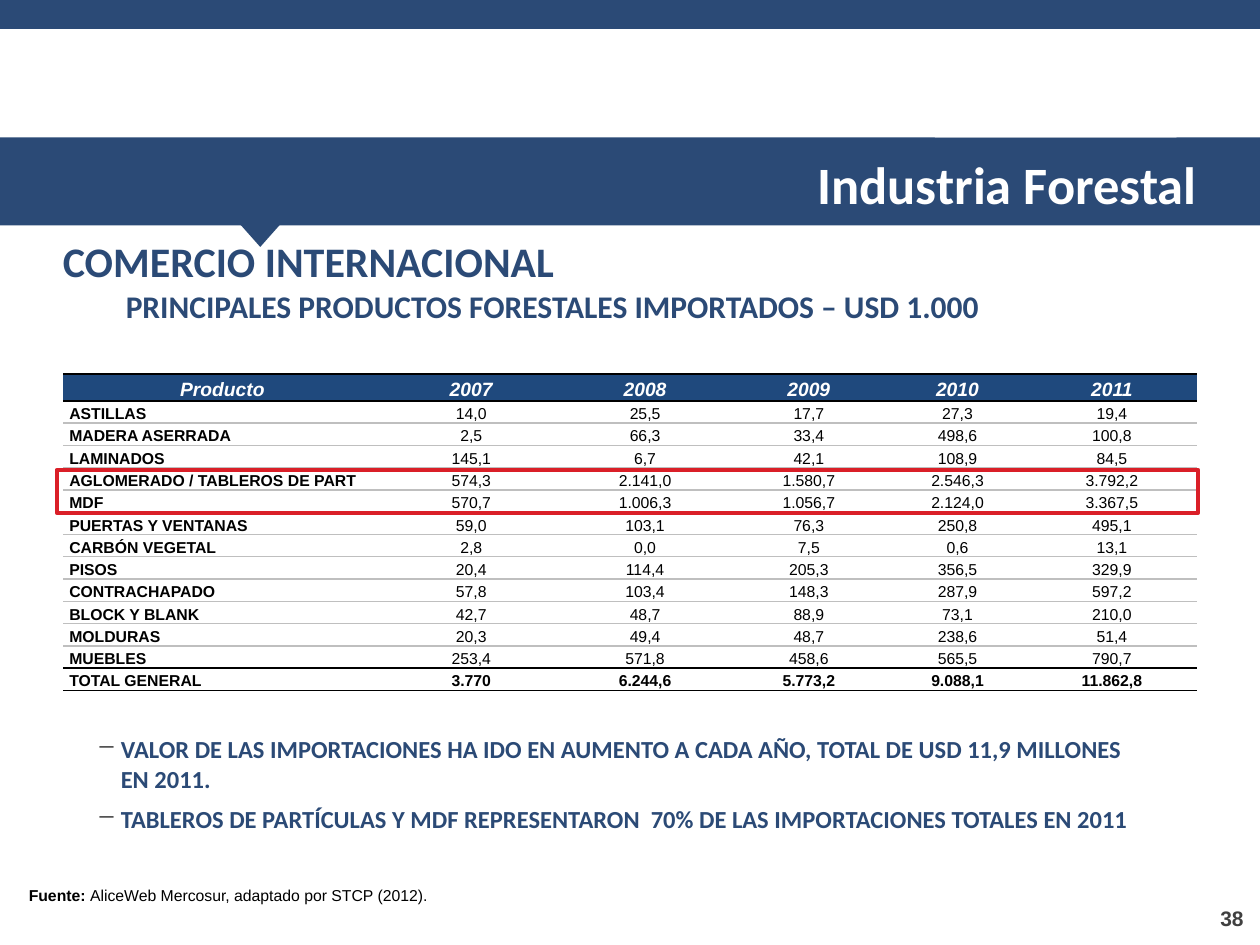
import pptx
import pptx.util
import pptx.dml.color
import pptx.enum.shapes
import pptx.enum.text
import pptx.oxml.ns
import lxml.etree

Inches = pptx.util.Inches
Pt = pptx.util.Pt
SHAPE = pptx.enum.shapes.MSO_SHAPE
ALIGN = pptx.enum.text.PP_ALIGN
COLOURS = {"navy": "2B4A76", "header": "1F497D", "red": "DA1F28", "white": "FFFFFF",
           "black": "000000", "rule": "BFBFBF", "grey": "404040"}


def colour(name):
    return pptx.dml.color.RGBColor.from_string(COLOURS[name])


def write(frame, text, first=True, font="Calibri", size=14, ink="navy", bold=True,
          italic=False, align=ALIGN.LEFT, margin=0, indent=0, after=0, spacing=None,
          bullet=None, plain=""):
    """Add one paragraph; plain is a closing span without bold."""
    para = frame.paragraphs[0] if first else frame.add_paragraph()
    props = para._p.get_or_add_pPr()
    props.set("marL", str(Inches(margin)))
    props.set("indent", str(Inches(indent)))
    para.alignment = align
    para.space_after = Pt(after)
    if spacing:
        para.line_spacing = spacing
    if bullet:
        holder = lxml.etree.SubElement(props, pptx.oxml.ns.qn("a:buClr"))
        lxml.etree.SubElement(holder, pptx.oxml.ns.qn("a:srgbClr"), val=COLOURS["black"])
        lxml.etree.SubElement(props, pptx.oxml.ns.qn("a:buChar"), char=bullet)
    for words, weight in ((text, bold), (plain, False)):
        if words:
            span = para.add_run()
            span.text = words
            span.font.name = font
            span.font.size = Pt(size)
            span.font.bold = weight
            span.font.italic = italic
            span.font.color.rgb = colour(ink)


deck = pptx.Presentation()
deck.slide_width, deck.slide_height = Inches(10), Inches(7.5)
page = deck.slides.add_slide(deck.slide_layouts[6])

# Bands, tab and pointer
for kind, fill, place, turn in (
    (SHAPE.RECTANGLE, "navy", (0, 0, 10, 0.23), 0),
    (SHAPE.RECTANGLE, "navy", (0, 1.09, 10, 0.7), 0),
    (SHAPE.PENTAGON, "white", (7.42, 0.7, 2.11, 0.39), 0),
    (SHAPE.ISOSCELES_TRIANGLE, "navy", (1.79, 1.65, 0.55, 0.31), 180),
):
    shape = page.shapes.add_shape(kind, *map(Inches, place))
    shape.shadow.inherit = False
    shape.fill.solid()
    shape.fill.fore_color.rgb = colour(fill)
    shape.line.fill.background()
    shape.rotation = turn

# Headings, source, page number and findings
finding = dict(margin=0.39, indent=-0.19, after=6, bullet="−")
for place, right_inset, paragraphs in (
    ((2.64, 1.16, 7.06, 0.7), 0.2, [("Industria Forestal",
     dict(size=30, ink="white", align=ALIGN.RIGHT))]),
    ((0.21, 1.82, 9.49, 0.5), 0.1, [("COMERCIO INTERNACIONAL",
     dict(size=24, margin=0.57, indent=-0.38))]),
    ((0.5, 2.23, 8.36, 0.4), 0.1, [("PRINCIPALES PRODUCTOS FORESTALES IMPORTADOS – USD 1.000",
     dict(size=18, margin=0.4))]),
    ((0.13, 6.98, 3.91, 0.25), 0.1, [("Fuente: ",
     dict(font="Arial", size=9, ink="black",
          plain="AliceWeb Mercosur, adaptado por STCP (2012)."))]),
    ((8.31, 7.14, 1.71, 0.3), 0.15, [("38",
     dict(font="Arial", size=12, ink="grey", align=ALIGN.RIGHT))]),
    ((0.47, 5.78, 8.62, 0.89), 0.1, [
        ("VALOR DE LAS IMPORTACIONES HA IDO EN AUMENTO A CADA AÑO, "
         "TOTAL DE USD 11,9 MILLONES EN 2011.", finding),
        ("TABLEROS DE PARTÍCULAS Y MDF REPRESENTARON  70% DE LAS "
         "IMPORTACIONES TOTALES EN 2011", finding)]),
):
    box = page.shapes.add_textbox(*map(Inches, place))
    box.text_frame.word_wrap = True
    box.text_frame.margin_right = Inches(right_inset)
    for number, (text, style) in enumerate(paragraphs):
        write(box.text_frame, text, first=number == 0, **style)

# Import values by product and year
rows = [
    ("Producto", "2007", "2008", "2009", "2010", "2011"),
    ("ASTILLAS", "14,0", "25,5", "17,7", "27,3", "19,4"),
    ("MADERA ASERRADA", "2,5", "66,3", "33,4", "498,6", "100,8"),
    ("LAMINADOS", "145,1", "6,7", "42,1", "108,9", "84,5"),
    ("AGLOMERADO / TABLEROS DE PART", "574,3", "2.141,0", "1.580,7", "2.546,3", "3.792,2"),
    ("MDF", "570,7", "1.006,3", "1.056,7", "2.124,0", "3.367,5"),
    ("PUERTAS Y VENTANAS", "59,0", "103,1", "76,3", "250,8", "495,1"),
    ("CARBÓN VEGETAL", "2,8", "0,0", "7,5", "0,6", "13,1"),
    ("PISOS", "20,4", "114,4", "205,3", "356,5", "329,9"),
    ("CONTRACHAPADO", "57,8", "103,4", "148,3", "287,9", "597,2"),
    ("BLOCK Y BLANK", "42,7", "48,7", "88,9", "73,1", "210,0"),
    ("MOLDURAS", "20,3", "49,4", "48,7", "238,6", "51,4"),
    ("MUEBLES", "253,4", "571,8", "458,6", "565,5", "790,7"),
    ("TOTAL GENERAL", "3.770", "6.244,6", "5.773,2", "9.088,1", "11.862,8"),
]
last = len(rows) - 1
table = page.shapes.add_table(len(rows), len(rows[0]), Inches(0.5), Inches(2.97),
                              Inches(9), Inches(2.51)).table
for column, width in zip(table.columns, (2.53, 1.42, 1.34, 1.26, 1.1, 1.35)):
    column.width = Inches(width)
for r, values in enumerate(rows):
    header = r == 0
    table.rows[r].height = Inches(0.21) if header else Inches(2.3 / last)
    for c, value in enumerate(values):
        cell = table.cell(r, c)
        cell.margin_left = cell.margin_right = Inches(0.05)
        cell.margin_top = cell.margin_bottom = 0
        cell.vertical_anchor = pptx.enum.text.MSO_ANCHOR.BOTTOM
        write(cell.text_frame, value, font="Arial", size=11 if header else 9,
              ink="white" if header else "black", italic=header, spacing=1.15,
              bold=header or c == 0 or r == last,
              align=ALIGN.LEFT if c == 0 and not header else ALIGN.CENTER)
        # Horizontal rules: black around the header and the total
        props = cell._tc.get_or_add_tcPr()
        for side in ("lnL", "lnR", "lnT", "lnB"):
            edge = lxml.etree.SubElement(props, pptx.oxml.ns.qn("a:" + side), w=str(Pt(1)))
            if side in ("lnL", "lnR"):
                lxml.etree.SubElement(edge, pptx.oxml.ns.qn("a:noFill"))
                continue
            boundary = r + (side == "lnB")
            rule = "black" if boundary in (0, 1, last, last + 1) else "rule"
            paint = lxml.etree.SubElement(edge, pptx.oxml.ns.qn("a:solidFill"))
            lxml.etree.SubElement(paint, pptx.oxml.ns.qn("a:srgbClr"), val=COLOURS[rule])
        if header:
            cell.fill.solid()
            cell.fill.fore_color.rgb = colour("header")
        else:
            cell.fill.background()

# Frame around the two board products
frame = page.shapes.add_shape(SHAPE.RECTANGLE, Inches(0.45), Inches(3.73),
                              Inches(9.06), Inches(0.34))
frame.shadow.inherit = False
frame.fill.background()
frame.line.color.rgb = colour("red")
frame.line.width = Pt(2.25)

deck.save("out.pptx")
